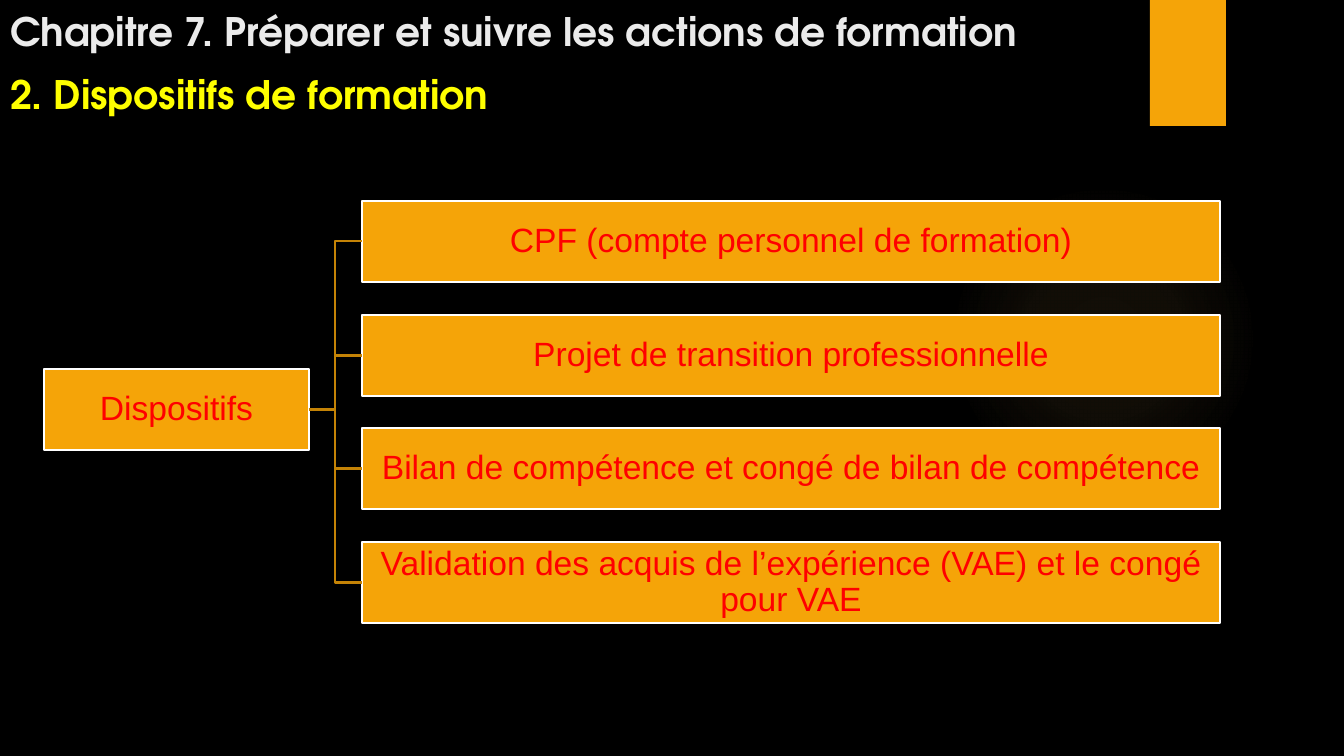
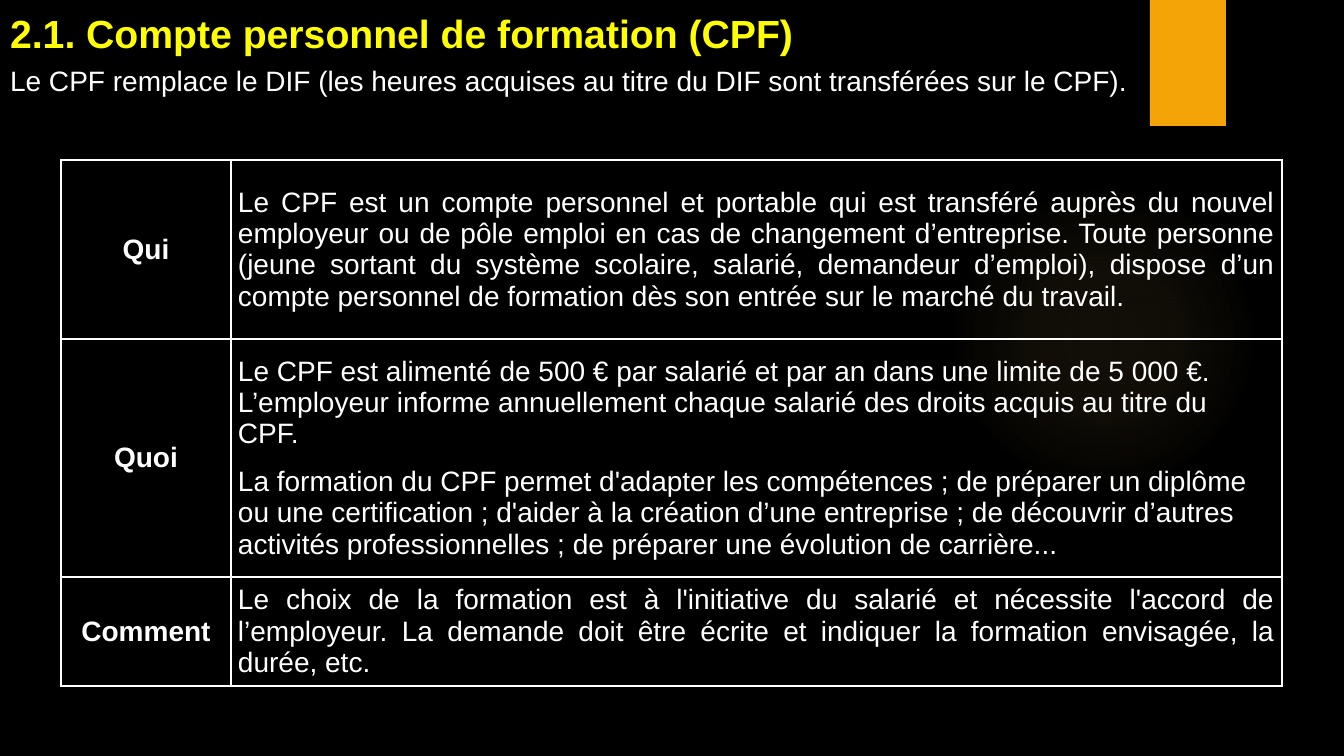
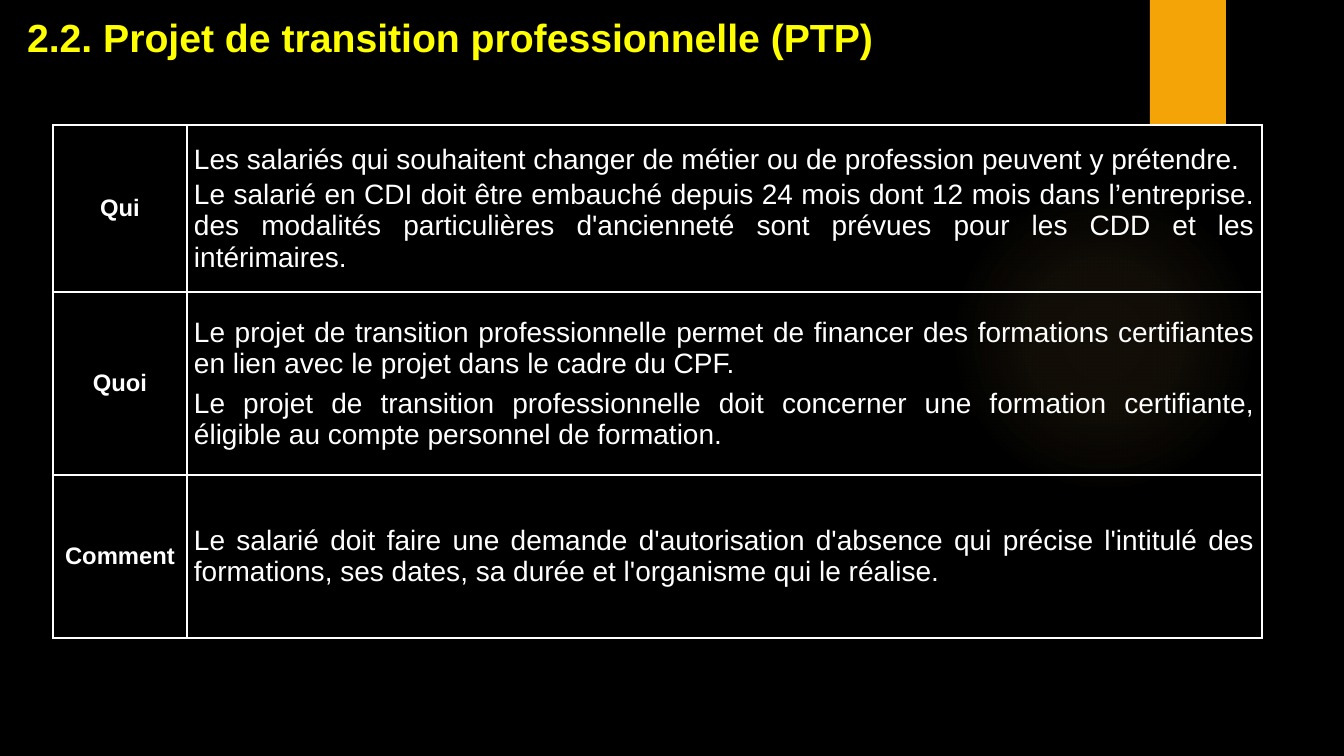
from lxml import etree
from pptx import Presentation, util as u
from pptx.dml import color
from pptx.enum import shapes, text
from pptx.oxml import ns

HUES = {"back": "000000", "gold": "F5A408", "wire": "C48306", "glow": "FAC96A",
        "head": "FFFF00", "pale": "EBEBEB", "text": "FFFFFF", "node": "FF0000"}
SANS, GEO = "Arial", "TeX Gyre Adventor"
LEFT, MID, JUST = text.PP_ALIGN.LEFT, text.PP_ALIGN.CENTER, text.PP_ALIGN.JUSTIFY
TOP, LOW = text.MSO_ANCHOR.TOP, text.MSO_ANCHOR.BOTTOM
CENTRE = text.MSO_ANCHOR.MIDDLE


def px(n):
    """Turn px into EMU."""
    return u.Emu(round(n * 914400 / 100.8))


def rgb(name):
    """Look up a colour."""
    return color.RGBColor.from_string(HUES[name])


def tag(up, name, **attrs):
    """Append a drawing element to its parent."""
    return etree.SubElement(up, ns.qn("a:" + name), attrs)


def style(frame, size, hue, font=SANS, bold=False, align=LEFT, gap=0):
    """Format every paragraph and run of a text frame."""
    for i, par in enumerate(frame.paragraphs):
        par.alignment = align
        par.space_before = u.Pt(gap if i else 0)
        par.space_after = u.Pt(0)
        for run in par.runs:
            run.font.size, run.font.bold, run.font.name = u.Pt(size), bold, font
            run.font.color.rgb = rgb(hue)


def block(slide, kind, box):
    """Add a shape without shadow or line."""
    shape = slide.shapes.add_shape(kind, *map(px, box))
    shape.shadow.inherit = False
    shape.line.fill.background()
    return shape


def decor(prs, slide):
    """Give the master its background, glow and gold tab."""
    master = prs.slide_master
    master.background.fill.solid()
    master.background.fill.fore_color.rgb = rgb("back")
    glow = block(slide, shapes.MSO_SHAPE.OVAL, (949, 184, 310, 310))
    grad = etree.Element(ns.qn("a:gradFill"), rotWithShape="1")
    stops = tag(grad, "gsLst")
    for pos, alpha in ((0, 7), (36, 6), (69, 0)):
        stop = tag(stops, "gs", pos=str(pos * 1000))
        hue = tag(stop, "srgbClr", val=HUES["glow"])
        tag(hue, "alpha", val=str(alpha * 1000))
    ring = tag(grad, "path", path="circle")
    tag(ring, "fillToRect", l="50000", t="50000", r="50000", b="50000")
    glow.element.spPr.find(ns.qn("a:prstGeom")).addnext(grad)
    bar = block(slide, shapes.MSO_SHAPE.RECTANGLE, (1150, 0, 76, 126))
    bar.fill.solid()
    bar.fill.fore_color.rgb = rgb("gold")
    for i, part in enumerate((glow, bar)):
        master.shapes.element.insert(2 + i, part.element)


def head(hold, box, words, size, hue, font=SANS, bold=True, anchor=TOP):
    """Fill and place a title or body placeholder."""
    hold.left, hold.top, hold.width, hold.height = map(px, box)
    frame = hold.text_frame
    frame.text = words
    frame.word_wrap = True
    frame.auto_size = text.MSO_AUTO_SIZE.NONE
    frame.vertical_anchor = anchor
    for par in frame.paragraphs:
        props = par._p.get_or_add_pPr()
        props.set("marL", "0")
        props.set("indent", "0")
        tag(props, "buNone")
    style(frame, size, hue, font, bold)


def node(slide, box, words):
    """Add one box of the tree."""
    shape = block(slide, shapes.MSO_SHAPE.RECTANGLE, box)
    shape.fill.solid()
    shape.fill.fore_color.rgb = rgb("gold")
    shape.line.color.rgb = rgb("text")
    shape.line.width = u.Pt(1.5)
    frame = shape.text_frame
    frame.text = words
    frame.word_wrap = True
    frame.vertical_anchor = CENTRE
    frame.margin_left = frame.margin_right = px(2)
    frame.margin_top = frame.margin_bottom = px(2)
    style(frame, 24, "node", align=MID)
    frame.paragraphs[0].line_spacing = 0.9
    return shape


def tree(slide, box, root, leaves):
    """Draw a root joined to a column of leaves."""
    x, y, wide, high = box
    tall, start = 81, 318
    step = (high - tall) / (len(leaves) - 1)
    stem = node(slide, (x, y + 168, 265, tall), root)
    for i, words in enumerate(leaves):
        spot = (x + start, y + round(i * step), wide - start, tall)
        leaf = node(slide, spot, words)
        wire = slide.shapes.add_connector(shapes.MSO_CONNECTOR.ELBOW, 0, 0, 0, 0)
        wire.begin_connect(stem, 3)
        wire.end_connect(leaf, 1)
        wire.line.color.rgb = rgb("wire")
        wire.line.width = u.Pt(1.5)
        tag(wire.element.spPr, "effectLst")


def fill(cell, words, **look):
    """Write a clear table cell with white borders."""
    cell.text_frame.text = words
    cell.vertical_anchor = CENTRE
    cell.margin_left = cell.margin_right = px(7)
    cell.margin_top = cell.margin_bottom = 0
    style(cell.text_frame, hue="text", **look)
    props = cell._tc.get_or_add_tcPr()
    for side in ("lnL", "lnR", "lnT", "lnB"):
        edge = tag(props, side, w="12700")
        tag(tag(edge, "solidFill"), "srgbClr", val=HUES["text"])
    cell.fill.background()


def grid(slide, spot, cols, rows, size):
    """Draw a table of labels and texts; rows give height, label, text, align, gap."""
    wide, high = sum(cols), sum(row[0] for row in rows)
    box = map(px, (*spot, wide, high))
    table = slide.shapes.add_table(len(rows), len(cols), *box).table
    table.first_row = table.horz_banding = False
    for col, width in zip(table.columns, cols):
        col.width = px(width)
    for i, (tall, label, words, align, gap) in enumerate(rows):
        table.rows[i].height = px(tall)
        fill(table.cell(i, 0), label, size=size, bold=True, align=MID)
        fill(table.cell(i, 1), words, size=20, align=align, gap=gap)


def plan(slide):
    """Build the overview of the schemes."""
    title, body = slide.placeholders
    head(title, (0, 8, 1300, 51), "Chapitre 7. Préparer et suivre les actions de formation",
         28, "pale", GEO, anchor=LOW)
    head(body, (0, 50, 1300, 72), "2. Dispositifs de formation", 28, "head", GEO, anchor=LOW)
    tree(slide, (44, 201, 1176, 422), "Dispositifs", (
        "CPF (compte personnel de formation)",
        "Projet de transition professionnelle",
        "Bilan de compétence et congé de bilan de compétence",
        "Validation des acquis de l’expérience (VAE) et le congé pour VAE"))


def account(slide):
    """Build the slide on the training account."""
    title, body = slide.placeholders
    head(title, (0, 4, 1275, 54), "2.1. Compte personnel de formation (CPF)", 28, "head")
    head(body, (0, 58, 1275, 42), "Le CPF remplace le DIF (les heures acquises au titre du DIF "
         "sont transférées sur le CPF).", 20, "text", bold=False)
    grid(slide, (61, 160), (170, 1051), (
        (179, "Qui", "Le CPF est un compte personnel et portable qui est transféré auprès du "
         "nouvel employeur ou de pôle emploi en cas de changement d’entreprise. Toute personne "
         "(jeune sortant du système scolaire, salarié, demandeur d’emploi), dispose d’un compte "
         "personnel de formation dès son entrée sur le marché du travail.", JUST, 0),
        (238, "Quoi", "Le CPF est alimenté de 500 € par salarié et par an dans une limite de "
         "5 000 €. L’employeur informe annuellement chaque salarié des droits acquis au titre "
         "du CPF.\nLa formation du CPF permet d'adapter les compétences ; de préparer un diplôme "
         "ou une certification ; d'aider à la création d’une entreprise ; de découvrir d’autres "
         "activités professionnelles ; de préparer une évolution de carrière...", LEFT, 12),
        (109, "Comment", "Le choix de la formation est à l'initiative du salarié et nécessite "
         "l'accord de l’employeur. La demande doit être écrite et indiquer la formation "
         "envisagée, la durée, etc.", JUST, 0)), 20)


def move(slide):
    """Build the slide on the career change project."""
    head(slide.shapes.title, (17, 8, 877, 57),
         "2.2. Projet de transition professionnelle (PTP)", 28, "head")
    grid(slide, (53, 125), (134, 1075), (
        (167, "Qui", "Les salariés qui souhaitent changer de métier ou de profession peuvent y "
         "prétendre.\nLe salarié en CDI doit être embauché depuis 24 mois dont 12 mois dans "
         "l’entreprise. des modalités particulières d'ancienneté sont prévues pour les CDD et "
         "les intérimaires.", JUST, 3),
        (183, "Quoi", "Le projet de transition professionnelle permet de financer des formations "
         "certifiantes en lien avec le projet dans le cadre du CPF.\nLe projet de transition "
         "professionnelle doit concerner une formation certifiante, éligible au compte "
         "personnel de formation.", JUST, 6),
        (163, "Comment", "Le salarié doit faire une demande d'autorisation d'absence qui précise "
         "l'intitulé des formations, ses dates, sa durée et l'organisme qui le réalise.",
         JUST, 0)), 17)


def main():
    """Build and save the deck."""
    prs = Presentation()
    prs.slide_width, prs.slide_height = px(1344), px(756)
    for build, layout in ((plan, 1), (account, 1), (move, 5)):
        slide = prs.slides.add_slide(prs.slide_layouts[layout])
        if build is plan:
            decor(prs, slide)
        build(slide)
    prs.save("out.pptx")


if __name__ == "__main__":
    main()
